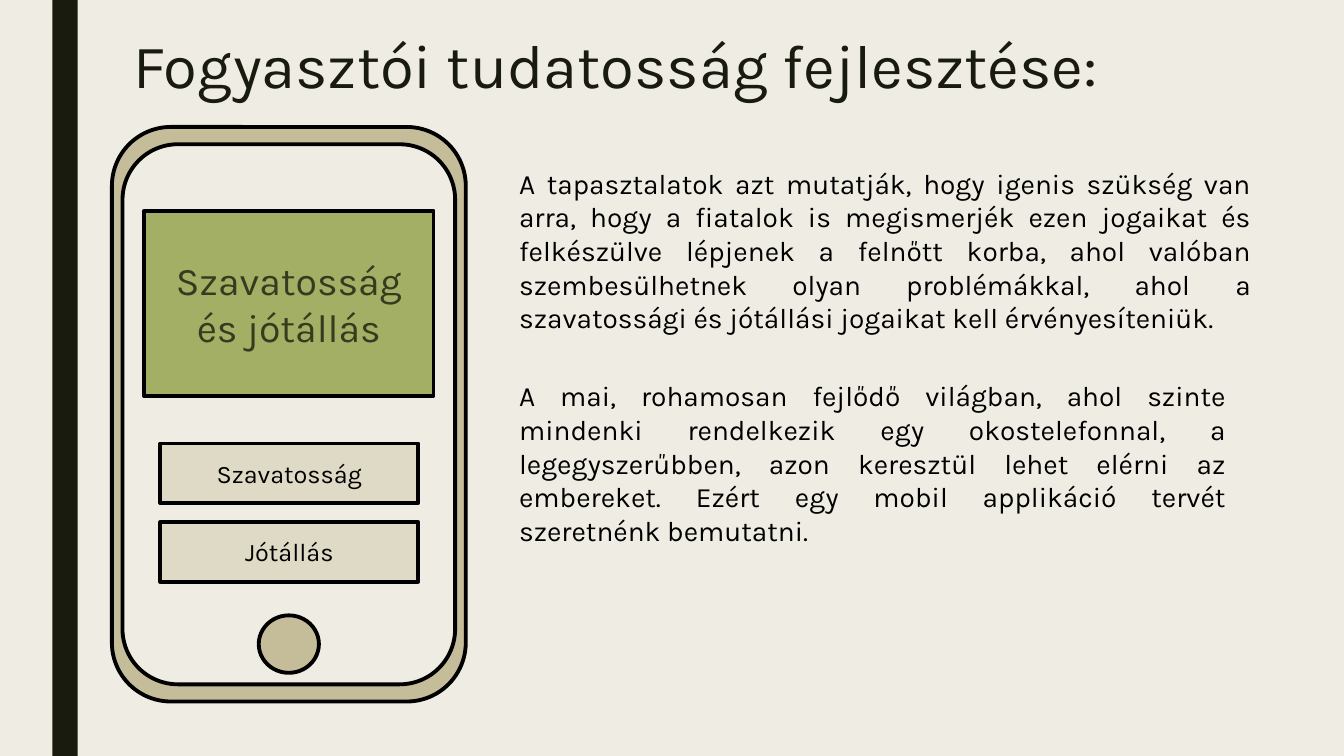
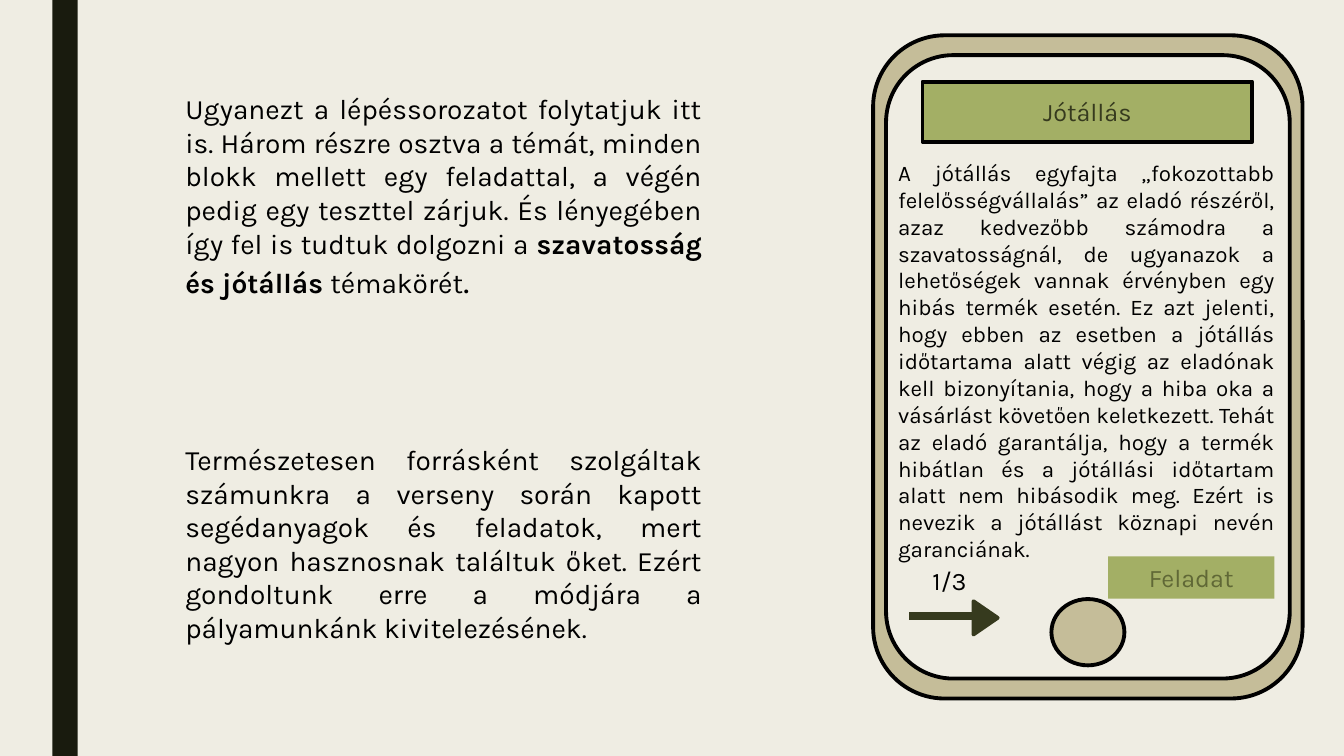
from lxml import etree
from pptx import Presentation
from pptx.dml.color import RGBColor
from pptx.enum import shapes, text
from pptx.oxml import ns
from pptx.util import Inches, Pt

FONT = "Karla"
PAPER = RGBColor(0xEF, 0xED, 0xE3)
DARK = RGBColor(0x19, 0x1B, 0x0E)
OLIVE = RGBColor(0x36, 0x3A, 0x1E)
MOSS = RGBColor(0x60, 0x68, 0x36)
GREEN = RGBColor(0xA3, 0xAF, 0x65)
TAN = RGBColor(0xC5, 0xBD, 0x99)
SAND = RGBColor(0xDE, 0xDA, 0xC5)
BLACK = RGBColor(0, 0, 0)

LEFT, CENTER, JUSTIFY = (
    text.PP_ALIGN.LEFT, text.PP_ALIGN.CENTER, text.PP_ALIGN.JUSTIFY)
RECT = shapes.MSO_SHAPE.RECTANGLE
OUTLINE = 2.75


def write(tf, content, size=20, color=BLACK, align=LEFT,
          anchor=text.MSO_ANCHOR.TOP, spacing=None):
    tf.word_wrap = True
    tf.vertical_anchor = anchor
    p = tf.paragraphs[0]
    p.alignment = align
    if spacing:
        p.line_spacing = spacing
    runs = [(content, {})] if isinstance(content, str) else content
    for words, style in runs:
        r = p.add_run()
        r.text = words
        r.font.name = FONT
        r.font.size = Pt(style.get("size", size))
        r.font.bold = style.get("bold", False)
        r.font.color.rgb = color


def add_text(slide, box, content, **style):
    sp = slide.shapes.add_textbox(*map(Inches, box))
    write(sp.text_frame, content, **style)
    sp.text_frame.auto_size = text.MSO_AUTO_SIZE.SHAPE_TO_FIT_TEXT
    return sp


def add_box(slide, box, fill, kind=RECT, line=BLACK):
    sp = slide.shapes.add_shape(kind, *map(Inches, box))
    sp.shadow.inherit = False
    sp.fill.solid()
    sp.fill.fore_color.rgb = fill
    if line is None:
        sp.line.fill.background()
    else:
        sp.line.color.rgb = line
        sp.line.width = Pt(OUTLINE)
    return sp


def add_button(slide, box, label, fill, size=18, color=BLACK, line=BLACK):
    sp = add_box(slide, box, fill, line=line)
    write(sp.text_frame, label, size=size, color=color, align=CENTER,
          anchor=text.MSO_ANCHOR.MIDDLE)
    return sp


def add_phone(slide, x, y, w, h):
    def part(fx, fy, fw, fh):
        return x + fx * w, y + fy * h, fw * w, fh * h

    rounded = shapes.MSO_SHAPE.ROUNDED_RECTANGLE
    add_box(slide, (x, y, w, h), TAN, rounded)
    add_box(slide, part(0.03, 0.03, 0.94, 0.94), PAPER, rounded)
    add_box(slide, part(0.415, 0.85, 0.17, 0.1), TAN, shapes.MSO_SHAPE.OVAL)


def add_arrow(slide):
    head = add_box(slide, (9.61, 6.01, 0.33, 0.24), OLIVE,
                   shapes.MSO_SHAPE.ISOSCELES_TRIANGLE, OLIVE)
    head.rotation = 90
    shaft = slide.shapes.add_connector(
        shapes.MSO_CONNECTOR.STRAIGHT,
        *map(Inches, (9.02, 6.11, 9.77, 6.11)))
    shaft.line.color.rgb = OLIVE
    shaft.line.width = Pt(6)
    etree.SubElement(shaft.element.spPr, ns.qn("a:effectLst"))


def style_master(prs, slide):
    master = prs.slide_master
    master.background.fill.solid()
    master.background.fill.fore_color.rgb = PAPER
    band = add_box(slide, (0.52, 0, 0.25, 7.5), DARK, line=None)
    band.element.nvSpPr.cNvPr.set("id", "100")
    master.shapes.element.insert(2, band.element)


def build_plan(slide):
    title = slide.shapes.title
    title.left, title.top, title.width, title.height = map(
        Inches, (1.22, 0.31, 10.5, 0.95))
    write(title.text_frame, "Fogyasztói tudatosság fejlesztése:",
          size=44, color=DARK, spacing=0.89)
    add_phone(slide, 1.11, 1.26, 3.51, 5.7)
    add_button(slide, (1.43, 2.09, 2.87, 1.84), "Szavatosság és jótállás",
               GREEN, size=28, color=OLIVE)
    for i, label in enumerate(("Szavatosság", "Jótállás")):
        add_button(slide, (1.59, 4.4 + i * 0.78, 2.56, 0.59), label, SAND)
    add_text(slide, (5.05, 1.6, 7.46, 1.78),
             "A tapasztalatok azt mutatják, hogy igenis szükség van arra, "
             "hogy a fiatalok is megismerjék ezen jogaikat és felkészülve "
             "lépjenek a felnőtt korba, ahol valóban szembesülhetnek olyan "
             "problémákkal, ahol a szavatossági és jótállási jogaikat kell "
             "érvényesíteniük.", align=JUSTIFY)
    add_text(slide, (5.05, 3.71, 7.21, 1.45),
             "A mai, rohamosan fejlődő világban, ahol szinte mindenki "
             "rendelkezik egy okostelefonnal, a legegyszerűbben, azon "
             "keresztül lehet elérni az embereket. Ezért egy mobil "
             "applikáció tervét szeretnénk bemutatni.", align=JUSTIFY)


def build_warranty(slide):
    add_phone(slide, 8.66, 0.35, 4.26, 6.58)
    add_button(slide, (9.15, 0.81, 3.27, 0.6), "Jótállás", GREEN, color=OLIVE)
    add_text(slide, (8.81, 1.53, 3.93, 3.87),
             "A jótállás egyfajta „fokozottabb felelősségvállalás” az eladó "
             "részéről, azaz kedvezőbb számodra a szavatosságnál, de "
             "ugyanazok a lehetőségek vannak érvényben egy hibás termék "
             "esetén. Ez azt jelenti, hogy ebben az esetben a jótállás "
             "időtartama alatt végig az eladónak kell bizonyítania, hogy a "
             "hiba oka a vásárlást követően keletkezett. Tehát az eladó "
             "garantálja, hogy a termék hibátlan és a jótállási időtartam "
             "alatt nem hibásodik meg. Ezért is nevezik a jótállást köznapi "
             "nevén garanciának.", size=16, align=JUSTIFY)
    add_text(slide, (9.15, 5.56, 0.62, 0.4), "1/3", size=18)
    add_button(slide, (10.99, 5.52, 1.65, 0.42), "Feladat", GREEN,
               color=MOSS, line=None)
    add_arrow(slide)
    add_text(slide, (1.74, 0.86, 5.32, 2.19), [
        ("Ugyanezt a lépéssorozatot folytatjuk itt is. Három részre osztva "
         "a témát, minden blokk mellett egy feladattal, a végén pedig egy "
         "teszttel zárjuk. És lényegében így fel is tudtuk dolgozni a ", {}),
        ("szavatosság és jótállás ", {"bold": True}),
        ("témakörét", {}),
        (".", {"size": 24}),
    ], align=JUSTIFY)
    add_text(slide, (1.74, 4.34, 5.32, 2.12),
             "Természetesen forrásként szolgáltak számunkra a verseny során "
             "kapott segédanyagok és feladatok, mert nagyon hasznosnak "
             "találtuk őket. Ezért gondoltunk erre a módjára a pályamunkánk "
             "kivitelezésének.", align=JUSTIFY)


def main():
    prs = Presentation()
    prs.slide_width, prs.slide_height = Inches(13.33), Inches(7.5)
    plan = prs.slides.add_slide(prs.slide_layouts.get_by_name("Title Only"))
    warranty = prs.slides.add_slide(prs.slide_layouts.get_by_name("Blank"))
    style_master(prs, plan)
    build_plan(plan)
    build_warranty(warranty)
    prs.save("out.pptx")


if __name__ == "__main__":
    main()
